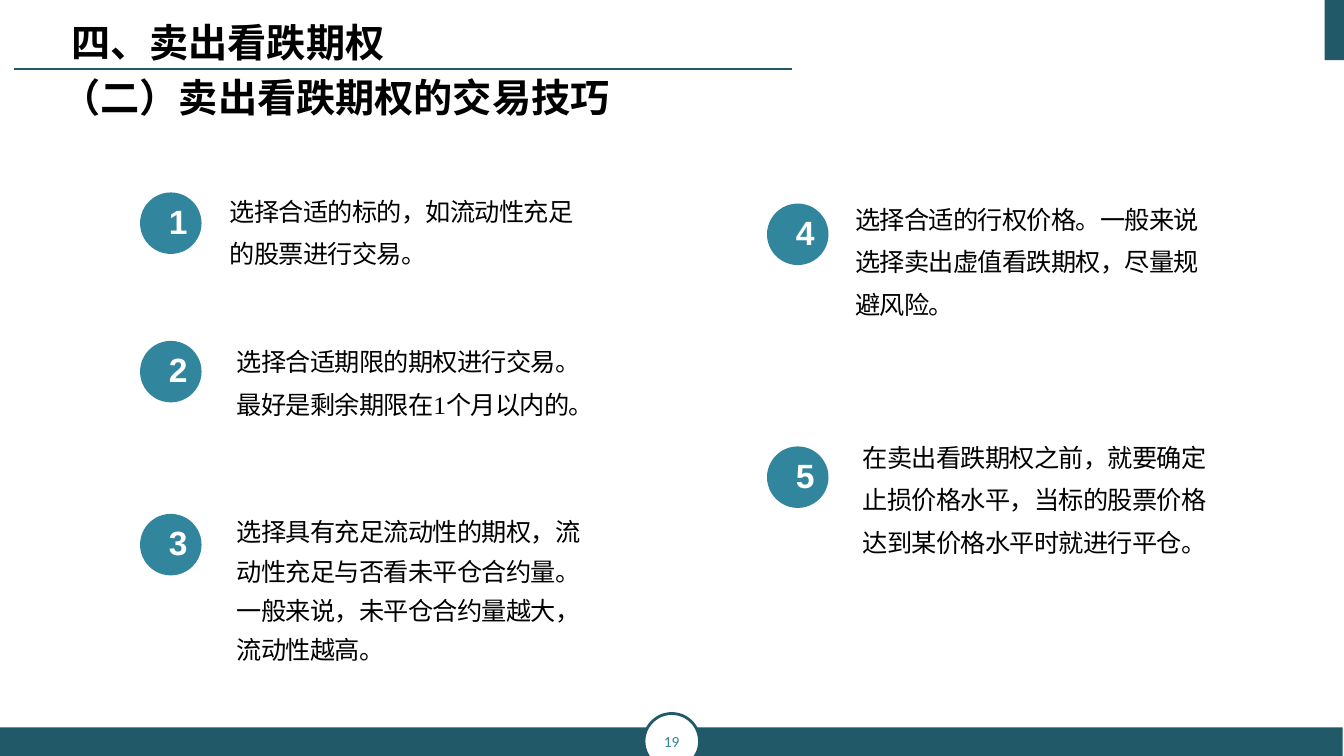
from lxml import etree
from pptx import Presentation
from pptx import util as u
from pptx.dml.color import RGBColor
from pptx.enum import shapes, text
from pptx.oxml.ns import qn

DARK, TEAL, WHITE, BLACK = "215968", "31859C", "FFFFFF", "000000"
CJK = "Noto Sans CJK SC"
SERIF = "Times New Roman"
CIRCLE = 1.55
LEFT_COLUMN, RIGHT_COLUMN = 3.53, 19.33

# number, circle left and top, text left, top and width, indent, line spacing, wording
TIPS = [
    (1, LEFT_COLUMN, 4.85, 5.54, 4.52, 9.7, 0, 1.4,
     "选择合适的标的，如流动性充足的股票进行交易。"),
    (4, RIGHT_COLUMN, 5.13, 21.31, 4.72, 9.7, 0, 1.4,
     "选择合适的行权价格。一般来说选择卖出虚值看跌期权，尽量规避风险。"),
    (2, LEFT_COLUMN, 8.59, 5.72, 8.31, 9.7, 0, 1.4,
     "选择合适期限的期权进行交易。最好是剩余期限在1个月以内的。"),
    (3, LEFT_COLUMN, 12.95, 5.72, 12.67, 9.7, 0, 1.3,
     "选择具有充足流动性的期权，流动性充足与否看未平仓合约量。"
     "一般来说，未平仓合约量越大，流动性越高。"),
    (5, RIGHT_COLUMN, 11.25, 20.52, 10.72, 10.67, 0.97, 1.4,
     "在卖出看跌期权之前，就要确定止损价格水平，"
     "当标的股票价格达到某价格水平时就进行平仓。"),
]


def rgb(value):
    return RGBColor.from_string(value)


class Painter:
    def __init__(self, page):
        self.page = page

    def shape(self, kind, left, top, width, height, fill, line=None):
        box = self.page.shapes.add_shape(
            kind, u.Cm(left), u.Cm(top), u.Cm(width), u.Cm(height))
        box.shadow.inherit = False
        box.fill.solid()
        box.fill.fore_color.rgb = rgb(fill)
        if line:
            box.line.color.rgb = rgb(line)
            box.line.width = u.Pt(2)
        else:
            box.line.fill.background()
        return box

    def rule(self, start, end, y):
        line = self.page.shapes.add_connector(
            shapes.MSO_CONNECTOR.STRAIGHT, u.Cm(start), u.Cm(y), u.Cm(end), u.Cm(y))
        line.line.color.rgb = rgb(DARK)
        line.line.width = u.Pt(1.5)
        etree.SubElement(line._element.spPr, qn("a:effectLst"))

    def fill_text(self, box, wording, size, font, color, bold=False, centred=False,
                  spacing=None, after=0, indent=0, tracking=0):
        """Fill the box with one styled paragraph and return its text frame."""
        frame = box.text_frame
        frame.word_wrap = True
        para = frame.paragraphs[0]
        para.text = wording
        para.alignment = text.PP_ALIGN.CENTER if centred else text.PP_ALIGN.LEFT
        if spacing:
            para.line_spacing = spacing
        para.space_after = u.Pt(after)
        para.font.size = u.Pt(size)
        para.font.bold = bold
        para.font.name = font
        para.font.color.rgb = rgb(color)
        props = para._p.get_or_add_pPr()
        props.set("marL", str(u.Cm(indent)))
        props.set("indent", "0")
        defaults = props.find(qn("a:defRPr"))
        defaults.set("spc", str(int(tracking * 100)))
        etree.SubElement(defaults, qn("a:ea"), typeface=CJK)
        return frame

    def label(self, left, top, width, height, wording, size, font, **style):
        box = self.page.shapes.add_textbox(
            u.Cm(left), u.Cm(top), u.Cm(width), u.Cm(height))
        return self.fill_text(box, wording, size, font, BLACK, **style)

    def number(self, left, top, value):
        circle = self.shape(shapes.MSO_SHAPE.OVAL, left, top, CIRCLE, CIRCLE, TEAL)
        frame = self.fill_text(circle, str(value), 24, "Arial", WHITE,
                               bold=True, centred=True, spacing=0.9)
        frame.vertical_anchor = text.MSO_ANCHOR.MIDDLE
        frame.margin_left = frame.margin_right = u.Cm(0.5)
        frame.margin_top = frame.margin_bottom = u.Cm(0.4)


def main():
    deck = Presentation()
    deck.slide_width, deck.slide_height = u.Cm(33.87), u.Cm(19.05)
    painter = Painter(deck.slides.add_slide(deck.slide_layouts[6]))

    painter.shape(shapes.MSO_SHAPE.RECTANGLE, 33.38, 0, 0.49, 1.52, DARK)
    painter.shape(shapes.MSO_SHAPE.RECTANGLE, 0, 18.33, 33.84, 0.72, DARK)
    badge = painter.shape(shapes.MSO_SHAPE.OVAL, 16.23, 17.98, 1.4, 1.4, WHITE, DARK)
    frame = painter.fill_text(badge, "19", 11, "Calibri", TEAL, centred=True)
    frame.vertical_anchor = text.MSO_ANCHOR.MIDDLE
    frame.margin_left = frame.margin_right = 0
    painter.rule(19.96, 0.36, 1.73)

    painter.label(0.81, 1.73, 32.39, 2.08, "（二）卖出看跌期权的交易技巧",
                  28, SERIF, bold=True, indent=0.49)
    for value, x, y, left, top, width, indent, spacing, wording in TIPS:
        painter.label(left, top, width, 1.83, wording, 18, SERIF, spacing=spacing,
                      after=8, indent=indent, tracking=-0.5)
        painter.number(x, y, value)
    heading = painter.label(1.32, 0.33, 8.84, 1.45, "四、卖出看跌期权", 28, CJK,
                            bold=True, centred=True)
    heading.auto_size = text.MSO_AUTO_SIZE.SHAPE_TO_FIT_TEXT

    deck.save("out.pptx")


if __name__ == "__main__":
    main()
